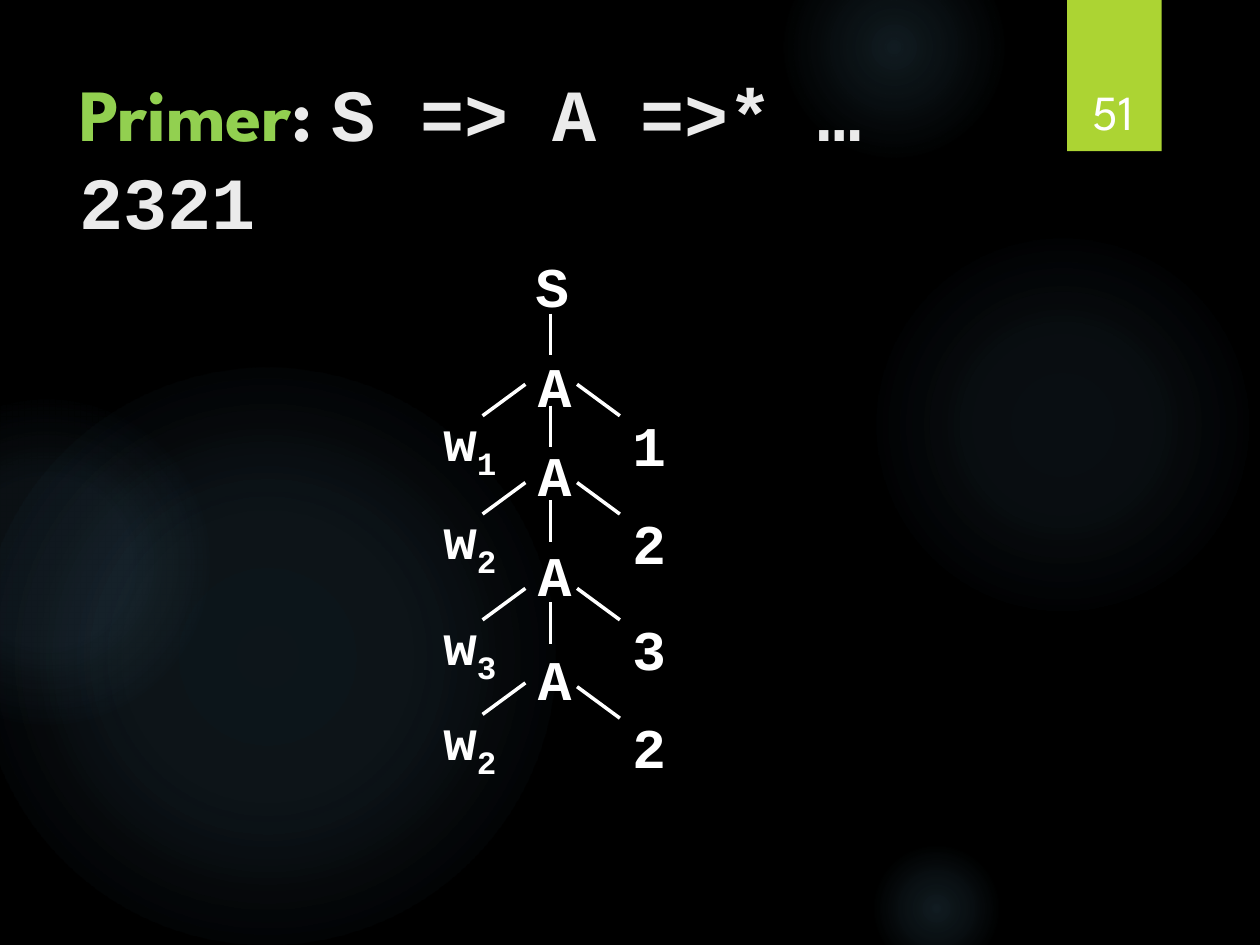
"""Build the derivation tree slide for S => A =>* …2321."""
from lxml import etree
from pptx import Presentation, util as u
from pptx.dml.color import RGBColor
from pptx.enum import shapes, text
from pptx.oxml import parse_xml
from pptx.oxml.ns import nsdecls, qn

COLORS = {"ground": "000000", "glow": "7AC4F0", "tab": "ACD433",
          "accent": "92D050", "title": "EBEBEB", "tree": "FFFFFF"}
MONO, SANS = "Courier New", "League Spartan"
COLUMNS, ROWS = 10, 7.5

deck = Presentation()
deck.slide_width, deck.slide_height = u.Inches(10), u.Inches(7.5)
column, row = deck.slide_width / COLUMNS, deck.slide_height / ROWS
slide = deck.slides.add_slide(deck.slide_layouts[6])
slide.background.fill.solid()
slide.background.fill.fore_color.rgb = RGBColor.from_string(COLORS["ground"])


def write(x, y, w, h, runs, size, wrap=False):
    box = slide.shapes.add_textbox(*map(int, (x * column, y * row, w * column, h * row)))
    frame = box.text_frame
    frame.word_wrap = wrap
    frame.auto_size = text.MSO_AUTO_SIZE.NONE if wrap else text.MSO_AUTO_SIZE.SHAPE_TO_FIT_TEXT
    for words, face, color, bold, baseline in runs:
        run = frame.paragraphs[0].add_run()
        run.text = words
        run.font.name, run.font.size, run.font.bold = face, u.Pt(size), bold
        run.font.color.rgb = RGBColor.from_string(COLORS[color])
        if baseline:
            run.font._element.set("baseline", str(baseline * 1000))
    return frame


def branch(x1, y1, x2, y2):
    edge = slide.shapes.add_connector(
        shapes.MSO_CONNECTOR.STRAIGHT,
        *map(int, (x1 * column, y1 * row, x2 * column, y2 * row)))
    edge.line.color.rgb = RGBColor.from_string(COLORS["tree"])
    edge.line.width = u.Pt(2)
    etree.SubElement(edge._element.spPr, qn("a:effectLst"))


glows = [
    (6.89, 1.83, 3.08, (7, 6), 69),
    (6.22, -0.5, 1.75, (14, 7), 73),
    (6.89, 6.67, 1.08, (14, 7), 66),
    (-0.17, 2.92, 4.58, (11, 10), 75),
    (-0.92, 3.17, 2.58, (8, 8), 72),
]
for x, y, size, (core, middle), rim in glows:
    glow = slide.shapes.add_shape(
        shapes.MSO_SHAPE.OVAL, *map(int, (x * column, y * row, size * column, size * row)))
    glow.shadow.inherit = False
    glow.line.fill.background()
    stops = "".join(
        f'<a:gs pos="{place * 1000}"><a:srgbClr val="{COLORS["glow"]}">'
        f'<a:alpha val="{alpha * 1000}"/></a:srgbClr></a:gs>'
        for place, alpha in ((0, core), (36, middle), (rim, 0)))
    glow._element.spPr.insert(2, parse_xml(
        f'<a:gradFill {nsdecls("a")} rotWithShape="1"><a:gsLst>{stops}</a:gsLst>'
        '<a:path path="circle"><a:fillToRect l="50000" t="50000" r="50000" b="50000"/>'
        '</a:path></a:gradFill>'))

page_tab = slide.shapes.add_shape(
    shapes.MSO_SHAPE.RECTANGLE, *map(int, (8.47 * column, 0, 0.75 * column, 1.2 * row)))
page_tab.fill.solid()
page_tab.fill.fore_color.rgb = RGBColor.from_string(COLORS["tab"])
page_tab.line.fill.background()
page_tab.shadow.inherit = False
page_tab._element.spPr.find(qn("a:effectLst")).append(parse_xml(
    f'<a:outerShdw {nsdecls("a")} blurRad="{int(u.Pt(3))}" dist="{int(u.Pt(2))}" dir="5400000">'
    f'<a:srgbClr val="{COLORS["ground"]}"><a:alpha val="45000"/></a:srgbClr></a:outerShdw>'))

write(0.53, 0.49, 7.72, 1.53, [
    ("Primer", SANS, "accent", True, 0),
    (": ", SANS, "title", True, 0),
    ("S => A =>* …2321", MONO, "title", True, 0),
], 42, wrap=True)
page_number = write(8.49, 0.32, 0.69, 0.84, [("51", SANS, "tree", False, 0)], 28, wrap=True)
page_number.vertical_anchor = text.MSO_ANCHOR.BOTTOM
page_number.paragraphs[0].alignment = text.PP_ALIGN.CENTER

write(4.15, 1.95, 0.47, 0.64, [("S", MONO, "tree", True, 0)], 32)
levels = [
    (2.49, 2.74, 3.05, 3.05, "1", "1"),
    (3.22, 3.45, 3.83, 3.83, "2", "2"),
    (3.97, 4.24, 4.67, 4.67, "3", "3"),
    (4.78, 5.07, 5.42, 5.45, "2", "2"),
]
for stem, node, left, right, index, digit in levels:
    branch(4.37, stem, 4.37, stem + 0.33)
    write(4.17, node, 0.47, 0.64, [("A", MONO, "tree", True, 0)], 32)
    branch(4.17, left, 3.83, left + 0.25)
    branch(4.58, right, 4.92, right + 0.25)
    write(3.42, left + 0.12, 0.65, 0.64,
          [("w", MONO, "tree", True, 0), (index, MONO, "tree", True, -25)], 32)
    write(4.92, right + 0.16, 0.47, 0.64, [(digit, MONO, "tree", True, 0)], 32)

deck.save("out.pptx")
